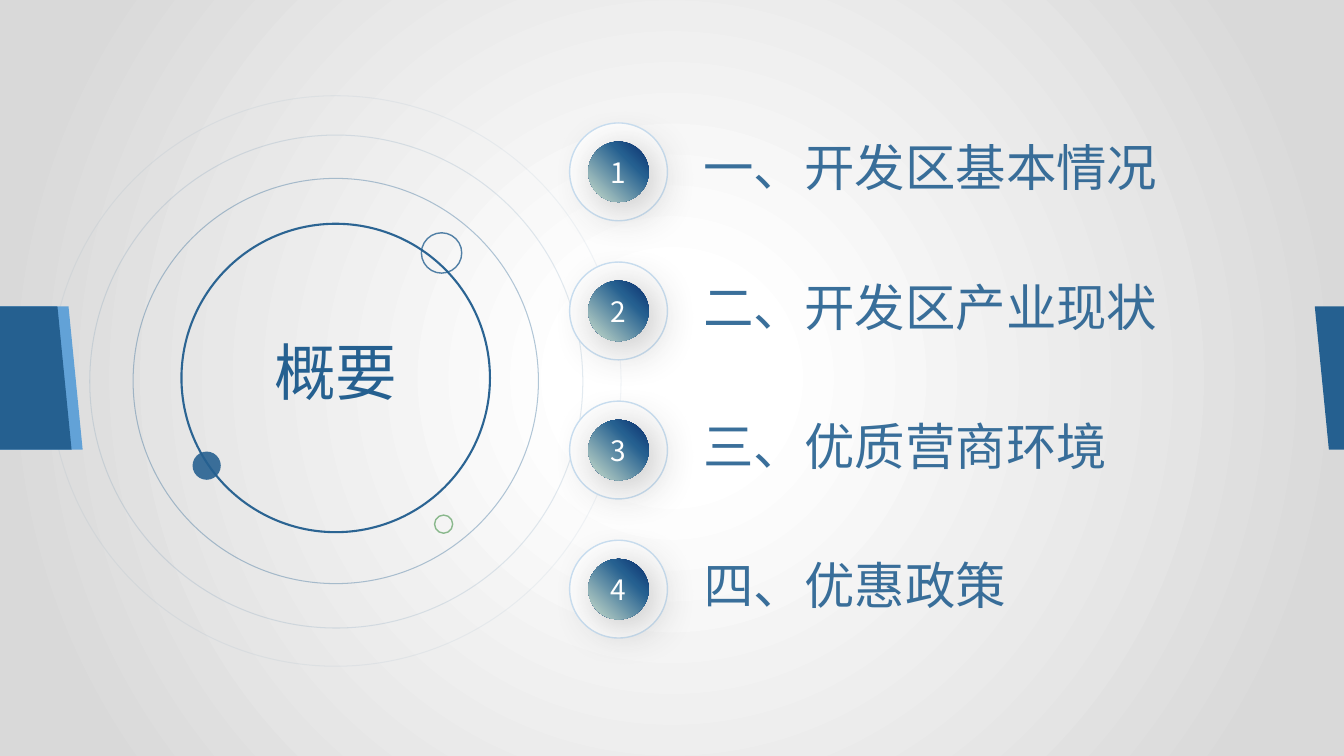
"""Build the overview slide with ringed title and four numbered sections."""
from lxml.etree import SubElement
from pptx import Presentation
from pptx.dml.color import RGBColor
from pptx.enum.shapes import MSO_SHAPE
from pptx.enum.text import MSO_ANCHOR, MSO_AUTO_SIZE, PP_ALIGN
from pptx.oxml import parse_xml
from pptx.oxml.ns import nsdecls, qn
from pptx.util import Inches, Pt

TITLE = "概要"
SECTIONS = ["一、开发区基本情况", "二、开发区产业现状", "三、优质营商环境", "四、优惠政策"]
FONT = "Noto Sans CJK SC"
COLORS = {"blue": "256090", "sky": "62A2D7", "green": "89B88C", "pale": "CBE0F2",
          "white": "FFFFFF", "gray": "D9D9D9", "mint": "CCE0CD", "navy": "092B6B",
          "shadow": "404040"}

# left, top, diameter, colour, line width, opacity
RINGS = [
    (1.8, 2.22, 3.06, "blue", 1.5, 96),
    (4.18, 2.31, 0.4, "blue", 1, 78),
    (4.31, 5.11, 0.18, "green", 1, 100),
    (1.32, 1.77, 4.02, "blue", 0.75, 34),
    (0.5, 0.95, 5.66, "blue", 0.75, 5),
    (0.89, 1.34, 4.89, "blue", 0.75, 12),
]
DOT = (1.91, 4.48, 0.28)
# top left, top right, bottom right, bottom left, colour
TABS = [(-0.94, 0.68, 0.82, -0.94, "sky"), (-0.94, 0.57, 0.71, -0.94, "blue"),
        (13.04, 14.26, 14.26, 13.18, "blue")]
TAB_TOP, TAB_BOTTOM = 3.04, 4.46
BADGE_LEFT, FIRST_TOP, PITCH = 5.65, 1.22, 1.38
BADGE, CORE = 0.97, 0.6


def color(name):
    return RGBColor.from_string(COLORS[name])


def set_opacity(parent, percent):
    if percent < 100:
        for node in parent.iter(qn("a:srgbClr")):
            SubElement(node, qn("a:alpha"), val=str(percent * 1000))


def radial(stops, center):
    stop_xml = "".join(f'<a:gs pos="{at * 1000}"><a:srgbClr val="{COLORS[name]}"/></a:gs>'
                       for at, name in stops)
    edges = " ".join(f'{side}="{value * 1000}"' for side, value in zip("ltrb", center))
    return parse_xml(f'<a:gradFill {nsdecls("a")} rotWithShape="1"><a:gsLst>{stop_xml}</a:gsLst>'
                     f'<a:path path="circle"><a:fillToRect {edges}/></a:path></a:gradFill>')


def replace_fill(parent, gradient):
    parent.replace(parent.find(qn("a:solidFill")), gradient)


def add_circle(page, left, top, size, fill=None, line=None, width=1, opacity=100):
    circle = page.shapes.add_shape(MSO_SHAPE.OVAL, Inches(left), Inches(top),
                                   Inches(size), Inches(size))
    circle.shadow.inherit = False
    if fill:
        circle.fill.solid()
        circle.fill.fore_color.rgb = color(fill)
    else:
        circle.fill.background()
    if line:
        circle.line.color.rgb = color(line)
        circle.line.width = Pt(width)
    else:
        circle.line.fill.background()
    set_opacity(circle._element.spPr, opacity)
    return circle


def add_tab(page, top_left, top_right, bottom_right, bottom_left, fill):
    corners = [(top_right, TAB_TOP), (bottom_right, TAB_BOTTOM), (bottom_left, TAB_BOTTOM)]
    builder = page.shapes.build_freeform(Inches(top_left), Inches(TAB_TOP))
    builder.add_line_segments([(Inches(x), Inches(y)) for x, y in corners], close=True)
    tab = builder.convert_to_shape()
    tab.shadow.inherit = False
    tab.fill.solid()
    tab.fill.fore_color.rgb = color(fill)
    tab.line.fill.background()


def write(box, text, size, name, align, opacity=100):
    frame = box.text_frame
    frame.text = text
    frame.word_wrap = True
    frame.auto_size = MSO_AUTO_SIZE.NONE
    frame.vertical_anchor = MSO_ANCHOR.MIDDLE
    para = frame.paragraphs[0]
    para.alignment = align
    span = para.runs[0]
    span.font.size = Pt(size)
    span.font.name = FONT
    span.font.color.rgb = color(name)
    properties = span._r.get_or_add_rPr()
    set_opacity(properties, opacity)
    SubElement(properties, qn("a:ea"), typeface=FONT)


def add_text(page, left, top, width, height, *style):
    box = page.shapes.add_textbox(Inches(left), Inches(top), Inches(width), Inches(height))
    write(box, *style)


def add_section(page, index, label):
    top = FIRST_TOP + index * PITCH
    inset = (BADGE - CORE) / 2
    add_circle(page, BADGE_LEFT, top, BADGE, "white", "pale")
    core = add_circle(page, BADGE_LEFT + inset, top + inset, CORE, "blue")
    properties = core._element.spPr
    replace_fill(properties, radial([(0, "mint"), (68, "blue"), (100, "navy")],
                                    (0, 100, 100, 0)))
    shadow = SubElement(properties.find(qn("a:effectLst")), qn("a:outerShdw"),
                        blurRad=str(Pt(33)), dist=str(Pt(7)), dir="2700000",
                        algn="tl", rotWithShape="0")
    SubElement(shadow, qn("a:srgbClr"), val=COLORS["shadow"])
    set_opacity(shadow, 35)
    add_text(page, BADGE_LEFT + 0.13, top + 0.27, 0.71, 0.44,
             str(index + 1), 20, "white", PP_ALIGN.CENTER)
    add_text(page, 6.88, top + 0.08, 5, 0.71, label, 36, "blue", PP_ALIGN.LEFT, 90)


def main():
    deck = Presentation()
    deck.slide_width, deck.slide_height = Inches(13.33), Inches(7.5)
    page = deck.slides.add_slide(deck.slide_layouts[5])
    page.background.fill.solid()
    replace_fill(page._element.cSld.find(qn("p:bg")).find(qn("p:bgPr")),
                 radial([(13, "white"), (89, "gray")], (50, 50, 50, 50)))

    title = page.shapes.title
    title.left, title.top = Inches(1.22), Inches(3.26)
    title.width, title.height = Inches(4.22), Inches(0.84)
    write(title, TITLE, 44, "blue", PP_ALIGN.CENTER)

    for left, top, size, name, width, opacity in RINGS:
        add_circle(page, left, top, size, line=name, width=width, opacity=opacity)
    add_circle(page, *DOT, fill="blue", opacity=89)
    for tab in TABS:
        add_tab(page, *tab)
    for index, label in enumerate(SECTIONS):
        add_section(page, index, label)
    deck.save("out.pptx")


if __name__ == "__main__":
    main()
